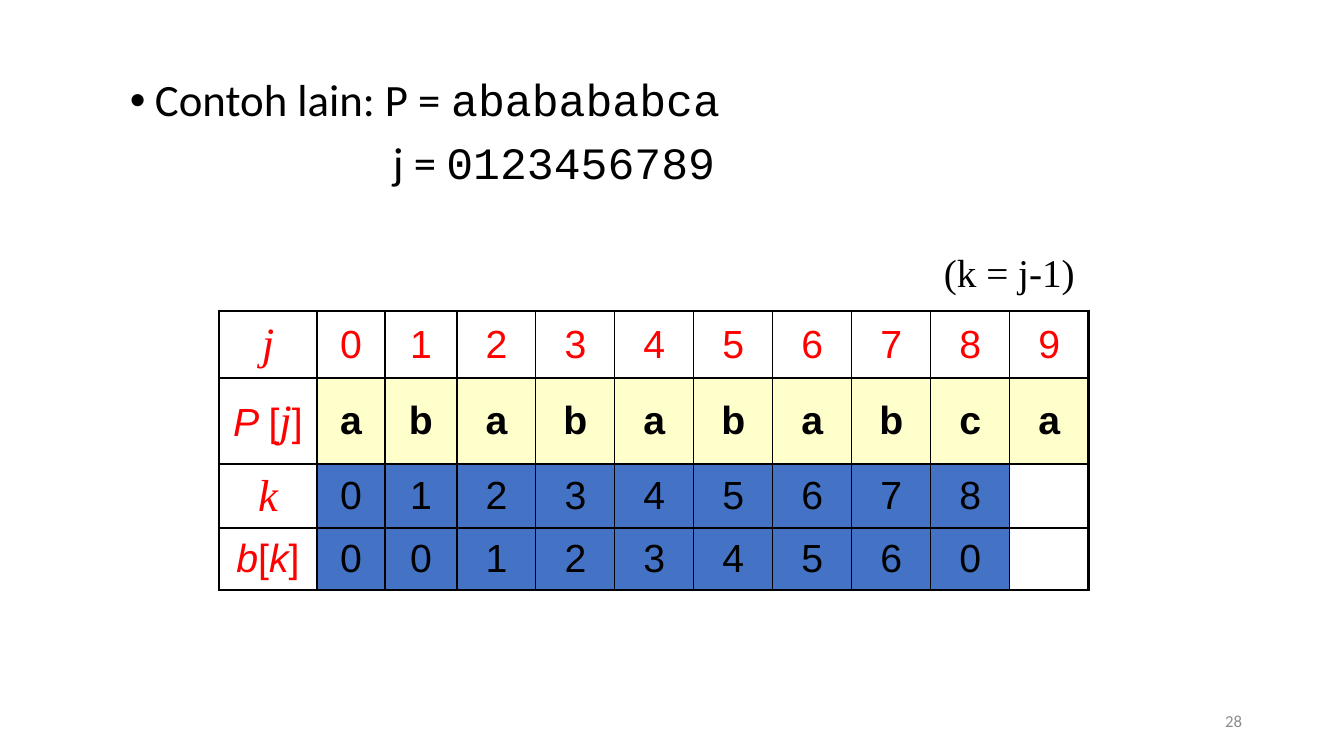
from lxml import etree
from pptx import Presentation, util as u
from pptx.dml.color import RGBColor
from pptx.enum import text
from pptx.oxml import ns

PX = 914400 / 100.8
BLACK, RED, GREY = "000000", "FF0000", "8C8C8C"
CREAM, BLUE = "FFFFCC", "4472C4"
CENTER, MIDDLE = text.PP_ALIGN.CENTER, text.MSO_ANCHOR.MIDDLE
BODY = {"name": "Calibri", "size": u.Pt(32)}
CODE = {"name": "Courier New", "size": u.Pt(32)}
NOTE = {"name": "Times New Roman", "size": u.Pt(28)}
PAGE = {"name": "Calibri", "size": u.Pt(12)}
DIGIT = {"name": "Arial", "size": u.Pt(28), "bold": False}
LETTER = {**DIGIT, "bold": True}
SLANTED = {**DIGIT, "italic": True}
VARIABLE = {"name": "Times New Roman", "size": u.Pt(32), "bold": False, "italic": True}
ROWS = [
    ([("j", VARIABLE)], "0123456789", DIGIT, RED, None),
    ([("P ", SLANTED), ("[", DIGIT), ("j", VARIABLE), ("]", DIGIT)],
     "ababababca", LETTER, BLACK, CREAM),
    ([("k", VARIABLE)], "012345678", DIGIT, BLACK, BLUE),
    ([("b", SLANTED), ("[", DIGIT), ("k", SLANTED), ("]", DIGIT)],
     "001234560", DIGIT, BLACK, BLUE),
]
COLUMN_WIDTHS = [98, 68, 72] + [79] * 8
ROW_HEIGHTS = [67, 86, 63, 62]


def px(length):
    """Turn px into EMU."""
    return u.Emu(round(length * PX))


def color(value):
    """Turn a hex string into a colour."""
    return RGBColor.from_string(value)


def set_attributes(target, values):
    """Set each attribute of the target from a dict."""
    for name, value in values.items():
        setattr(target, name, value)


def add_runs(paragraph, runs, ink):
    """Add formatted runs in one colour to a paragraph."""
    for words, style in runs:
        run = paragraph.add_run()
        run.text = words
        set_attributes(run.font, style)
        run.font.color.rgb = color(ink)


def add_text_box(slide, box, **frame_format):
    """Add an empty text box and return its frame."""
    frame = slide.shapes.add_textbox(*map(px, box)).text_frame
    set_attributes(frame, {"word_wrap": True, **frame_format})
    return frame


def indent(paragraph, left, first, bullet=None):
    """Set the left margin, first-line indent and optional bullet."""
    properties = paragraph._p.get_or_add_pPr()
    properties.set("marL", str(px(left)))
    properties.set("indent", str(px(first)))
    if bullet:
        font = etree.SubElement(properties, ns.qn("a:buFont"))
        font.set("typeface", "Arial")
        etree.SubElement(properties, ns.qn("a:buChar")).set("char", bullet)


def add_example(slide, box):
    """Place the pattern and its index line."""
    frame = add_text_box(slide, box)
    pattern, index = frame.paragraphs[0], frame.add_paragraph()
    indent(pattern, 25, -25, "•")
    indent(index, 263, 0)
    add_runs(pattern, [("Contoh lain: P = ", BODY), ("ababababca", CODE)], BLACK)
    add_runs(index, [("j = ", BODY), ("0123456789", CODE)], BLACK)
    pattern.line_spacing = index.line_spacing = 0.9
    index.space_before = u.Pt(10)


def add_label(slide, box, words, style, ink, alignment, wrap):
    """Place a one-line label centred vertically in its box."""
    frame = add_text_box(slide, box, vertical_anchor=MIDDLE, word_wrap=wrap)
    frame.paragraphs[0].alignment = alignment
    add_runs(frame.paragraphs[0], [(words, style)], ink)


def add_borders(cell, thick_sides):
    """Draw four black cell borders, thick on the named sides."""
    properties = cell._tc.get_or_add_tcPr()
    for side in "LRTB":
        line = etree.SubElement(properties, ns.qn(f"a:ln{side}"))
        line.set("w", str(u.Pt(2.25 if side in thick_sides else 1)))
        fill = etree.SubElement(line, ns.qn("a:solidFill"))
        etree.SubElement(fill, ns.qn("a:srgbClr")).set("val", BLACK)


def fill_cell(cell, runs, ink, background, thick_sides):
    """Give a cell its borders, fill and centred text."""
    add_borders(cell, thick_sides)
    if background:
        cell.fill.solid()
        cell.fill.fore_color.rgb = color(background)
    else:
        cell.fill.background()
    cell.vertical_anchor = MIDDLE
    paragraph = cell.text_frame.paragraphs[0]
    paragraph.alignment = CENTER
    add_runs(paragraph, runs, ink)


def add_border_table(slide, left, top):
    """Place the border function table."""
    size = sum(COLUMN_WIDTHS), sum(ROW_HEIGHTS)
    table = slide.shapes.add_table(len(ROW_HEIGHTS), len(COLUMN_WIDTHS),
                                   *map(px, (left, top, *size))).table
    set_attributes(table, {"first_row": False, "horz_banding": False})
    for column, width in zip(table.columns, COLUMN_WIDTHS):
        column.width = px(width)
    for row, height in zip(table.rows, ROW_HEIGHTS):
        row.height = px(height)
    last = len(COLUMN_WIDTHS) - 1
    row_sides = ["T", "", "B", "TB"]
    for row, sides, (label, values, style, ink, background) in zip(table.rows, row_sides, ROWS):
        for number, cell in enumerate(row.cells):
            thick = sides + {0: "L", last: "R"}.get(number, "")
            if number == 0:
                fill_cell(cell, label, RED, None, thick)
            elif number <= len(values):
                fill_cell(cell, [(values[number - 1], style)], ink, background, thick)
            else:
                fill_cell(cell, [], ink, None, thick)


def main():
    """Build the slide and save it."""
    presentation = Presentation()
    set_attributes(presentation, {"slide_width": px(1344), "slide_height": px(756)})
    slide = presentation.slides.add_slide(presentation.slide_layouts[6])
    add_example(slide, (120, 73, 1057, 601))
    add_label(slide, (934, 243, 154, 57), "(k = j-1)", NOTE, BLACK, text.PP_ALIGN.LEFT, False)
    add_border_table(slide, 219, 311)
    add_label(slide, (950, 701, 302, 40), "28", PAGE, GREY, text.PP_ALIGN.RIGHT, True)
    presentation.save("out.pptx")


if __name__ == "__main__":
    main()
